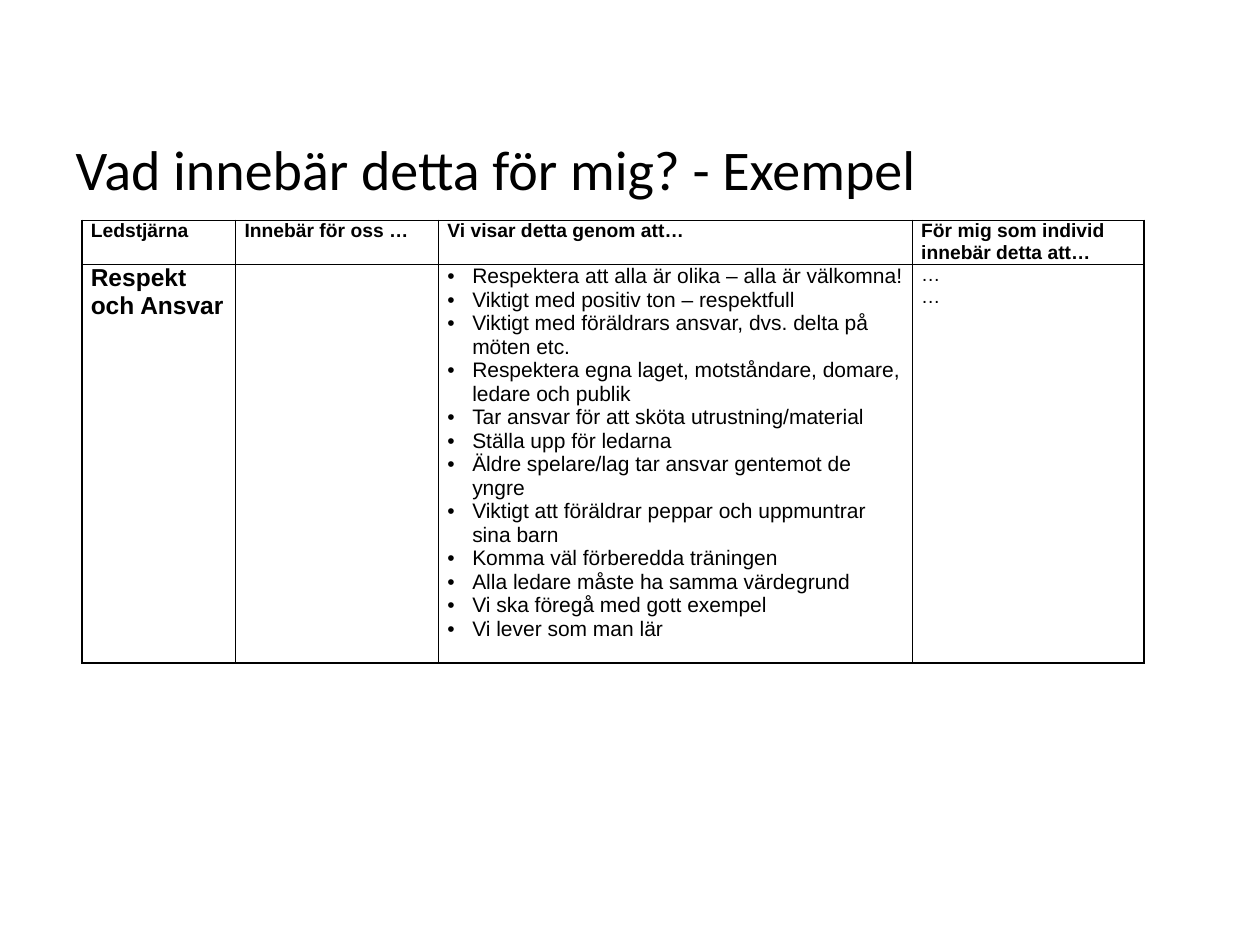
from lxml.etree import SubElement
from pptx import Presentation
from pptx.dml.color import RGBColor
from pptx.enum.text import MSO_ANCHOR, PP_ALIGN
from pptx.oxml.ns import qn
from pptx.util import Cm, Pt

BLACK = RGBColor(0x00, 0x00, 0x00)
WHITE = RGBColor(0xFF, 0xFF, 0xFF)

COLUMN_WIDTHS = [Cm(3.1), Cm(4.09), Cm(9.55), Cm(4.67)]
ROW_SHARES = [0.1, 0.9]
INDENT = Cm(0.5)

HEADINGS = [
    "Ledstjärna",
    "Innebär för oss …",
    "Vi visar detta genom att…",
    "För mig som individ innebär detta att…",
]
ACTIONS = [
    "Respektera att alla är olika – alla är välkomna!",
    "Viktigt med positiv ton – respektfull",
    "Viktigt med föräldrars ansvar, dvs. delta på möten etc.",
    "Respektera egna laget, motståndare, domare, ledare och publik",
    "Tar ansvar för att sköta utrustning/material",
    "Ställa upp för ledarna",
    "Äldre spelare/lag tar ansvar gentemot de yngre",
    "Viktigt att föräldrar peppar och uppmuntrar sina barn",
    "Komma väl förberedda träningen",
    "Alla ledare måste ha samma värdegrund",
    "Vi ska föregå med gott exempel",
    "Vi lever som man lär",
]


def add_bullet(paragraph):
    properties = paragraph._p.get_or_add_pPr()
    properties.set("marL", str(INDENT))
    properties.set("indent", str(-INDENT))
    SubElement(properties, qn("a:buFont"), typeface="Arial")
    SubElement(properties, qn("a:buChar"), char="•")


def write_text(text_frame, lines, size=11, font="Arial", bold=False, bullet=False):
    """Write one paragraph for each line."""
    for index, line in enumerate(lines):
        paragraph = text_frame.add_paragraph() if index else text_frame.paragraphs[0]
        paragraph.alignment = PP_ALIGN.LEFT
        if bullet:
            add_bullet(paragraph)
        run = paragraph.add_run()
        run.text = line
        run.font.size = Pt(size)
        run.font.name = font
        run.font.bold = bold
        run.font.color.rgb = BLACK


def format_cell(cell):
    cell.margin_left = cell.margin_right = Cm(0.18)
    cell.margin_top = cell.margin_bottom = 0
    cell.vertical_anchor = MSO_ANCHOR.TOP
    properties = cell._tc.get_or_add_tcPr()
    for side in ("lnL", "lnR", "lnT", "lnB"):
        line = SubElement(properties, qn(f"a:{side}"), w=str(Pt(1)))
        fill = SubElement(line, qn("a:solidFill"))
        SubElement(fill, qn("a:srgbClr"), val=str(BLACK))
    cell.fill.background()


def place_title(slide, left, top, width, height):
    title = slide.shapes.title
    title.left, title.top, title.width, title.height = left, top, width, height
    title.text_frame.vertical_anchor = MSO_ANCHOR.MIDDLE
    write_text(title.text_frame, ["Vad innebär detta för mig? - Exempel"],
               size=32, font="Calibri")


def place_table(slide, left, top, width, height):
    shape = slide.shapes.add_table(len(ROW_SHARES), len(COLUMN_WIDTHS),
                                   left, top, width, height)
    table = shape.table
    table.first_row = table.horz_banding = False
    for column, column_width in zip(table.columns, COLUMN_WIDTHS):
        column.width = column_width
    for row, share in zip(table.rows, ROW_SHARES):
        row.height = int(height * share)
    for cell in table.iter_cells():
        format_cell(cell)

    # Heading row
    for index, heading in enumerate(HEADINGS):
        write_text(table.cell(0, index).text_frame, [heading], bold=True)

    # Value row
    write_text(table.cell(1, 0).text_frame, ["Respekt och Ansvar"], size=14, bold=True)
    write_text(table.cell(1, 2).text_frame, ACTIONS, size=12, bullet=True)
    write_text(table.cell(1, 3).text_frame, ["…", "…"])


def main():
    presentation = Presentation()
    presentation.slide_width, presentation.slide_height = Cm(25.4), Cm(19.05)
    title_only = presentation.slide_layouts[5]
    slide = presentation.slides.add_slide(title_only)
    slide.background.fill.solid()
    slide.background.fill.fore_color.rgb = WHITE

    place_title(slide, Cm(1.27), Cm(2.34), Cm(22.86), Cm(2.1))
    place_table(slide, Cm(1.65), Cm(4.44), sum(COLUMN_WIDTHS), Cm(8.93))
    presentation.save("out.pptx")


if __name__ == "__main__":
    main()
